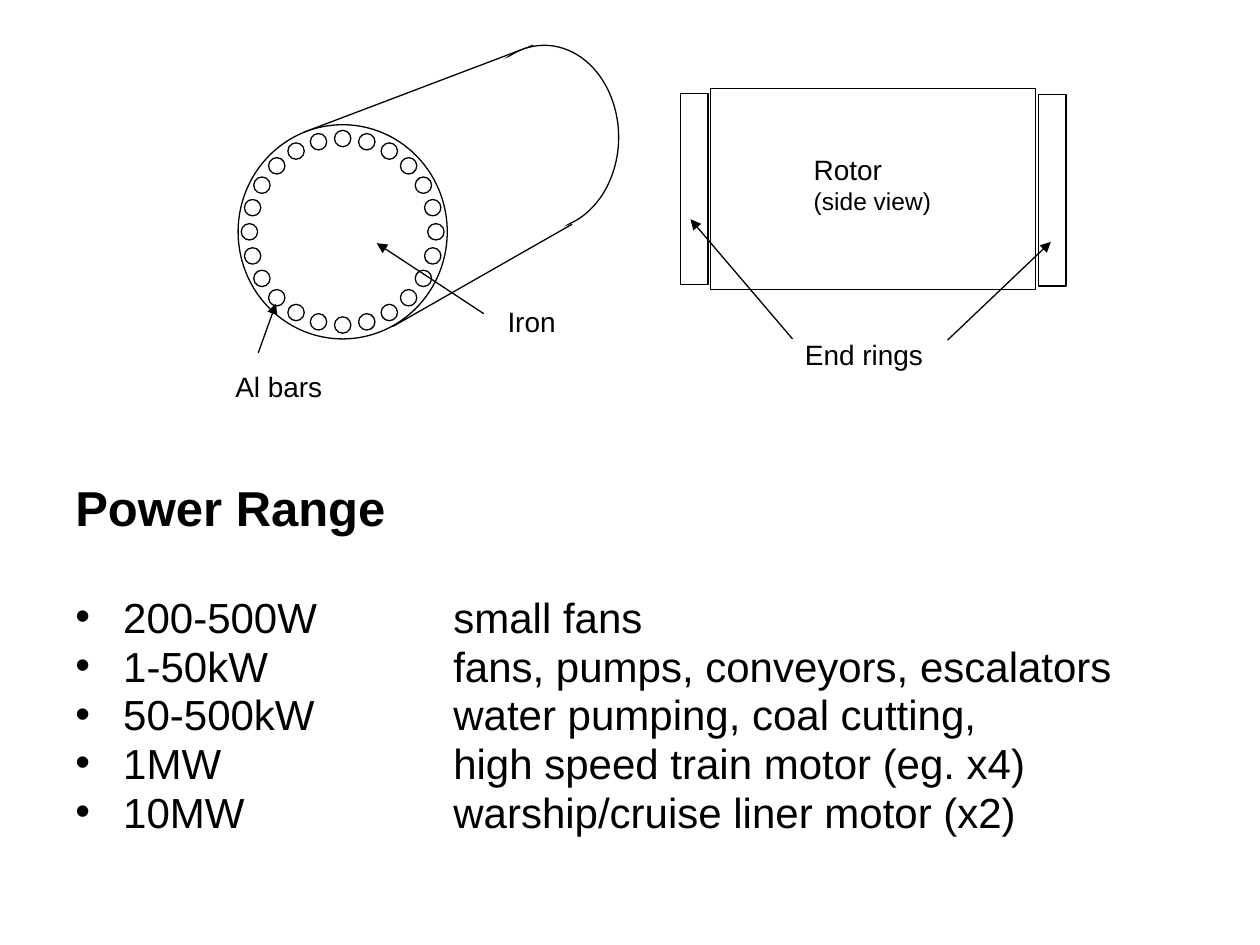
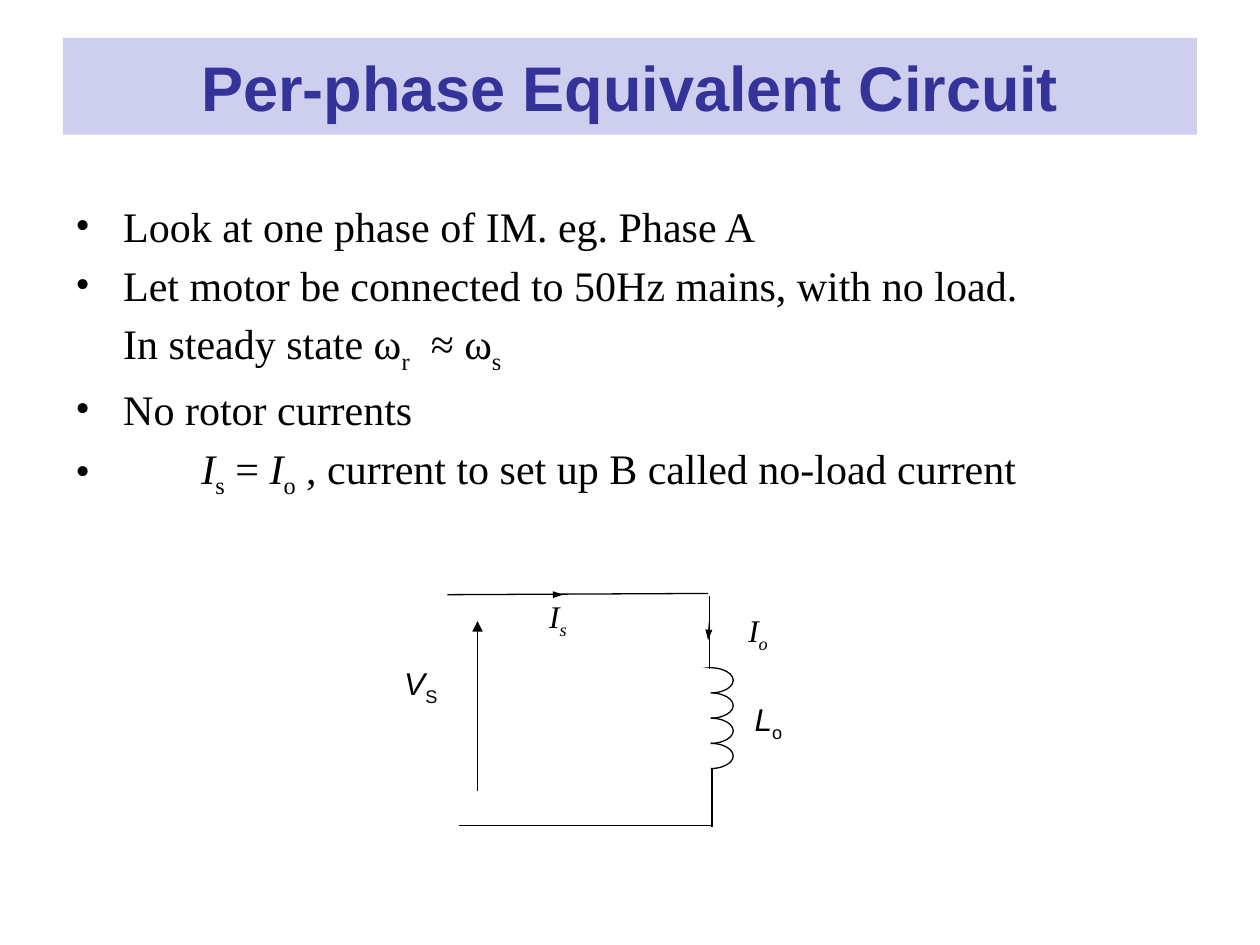
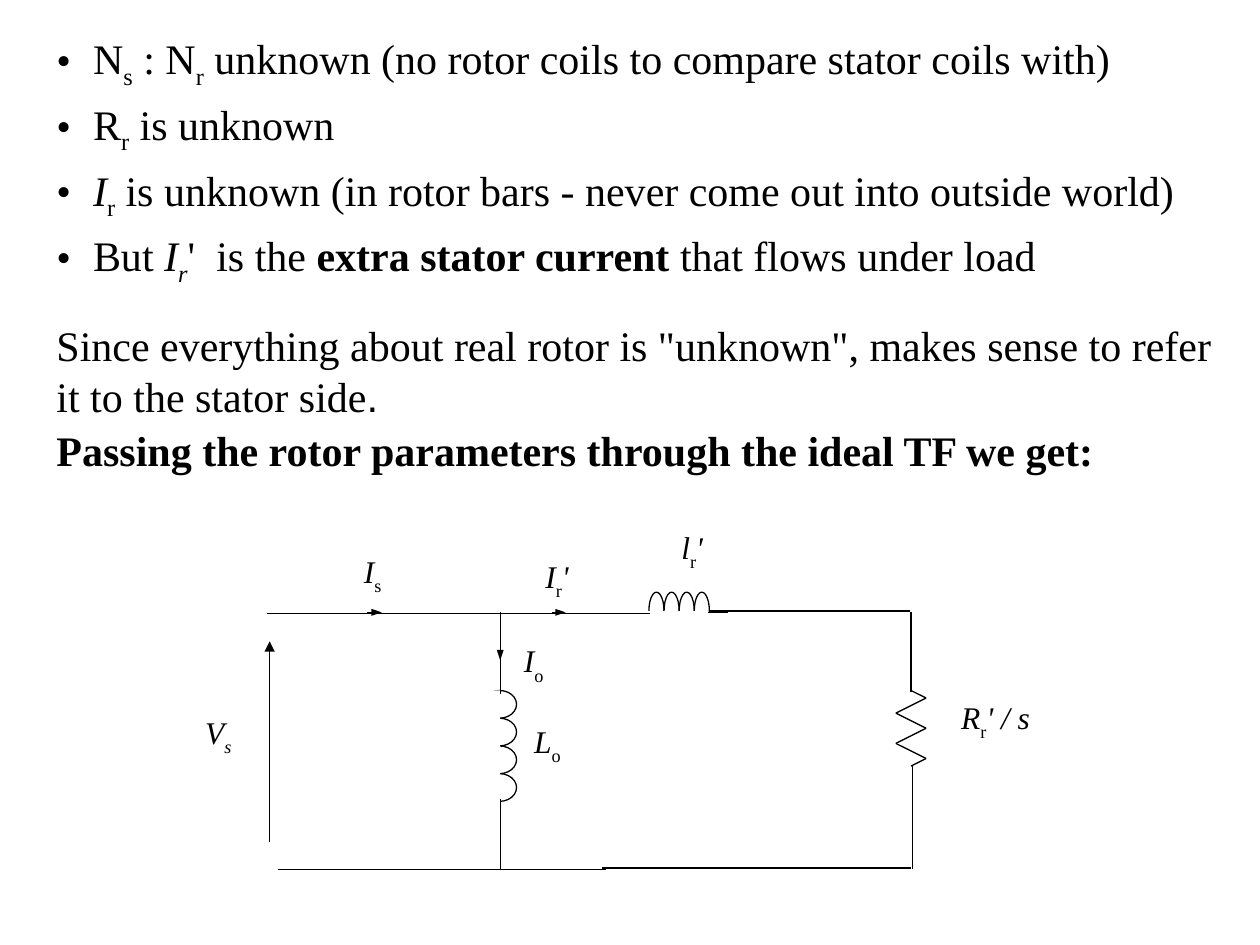
import math

from lxml import etree
from pptx import Presentation
from pptx import util as u
from pptx.dml.color import RGBColor
from pptx.enum import shapes, text
from pptx.oxml import ns

BLACK = "000000"
WHITE = "FFFFFF"
TITLE_BAND = "CECEEF"
TITLE_TEXT = "333399"
SANS = "Arial"
SERIF = "Times New Roman"
LINE_WIDTH = u.Pt(0.75)
ELLIPSE = shapes.MSO_SHAPE.OVAL
RECTANGLE = shapes.MSO_SHAPE.RECTANGLE
BODY_SIZE = 24
BODY_GAP = 4.8
STYLE_ATTRIBUTES = {
    "i": ("i", "1"),
    "b": ("b", "1"),
    "_": ("baseline", "-25000"),
    "v": ("baseline", "-30000"),
    "w": ("spc", "600"),
}


def rgb(color):
    return RGBColor.from_string(color)


def add_child(parent, tag, **attributes):
    return etree.SubElement(parent, ns.qn(tag), **attributes)


def add_runs(paragraph, runs):
    for content, style in runs:
        run = paragraph.add_run()
        run.text = content
        for mark in style:
            run.font._element.set(*STYLE_ATTRIBUTES[mark])


def set_font(paragraph, font, size, color=BLACK, bold=None):
    paragraph.font.name = font
    paragraph.font.size = u.Pt(size)
    paragraph.font.color.rgb = rgb(color)
    paragraph.font.bold = bold


def add_paragraph(frame, runs, font, size=BODY_SIZE, bold=None, bullet=False,
                  left=0.0, hanging=0.0, before=BODY_GAP, spacing=None, tab=None):
    first = not frame.paragraphs[0].runs
    paragraph = frame.paragraphs[0] if first else frame.add_paragraph()
    add_runs(paragraph, [(runs, "")] if isinstance(runs, str) else runs)
    properties = paragraph._p.get_or_add_pPr()
    properties.set("marL", str(u.Inches(left)))
    properties.set("indent", str(-u.Inches(hanging)))
    if bullet:
        add_child(properties, "a:buFont", typeface=font)
        add_child(properties, "a:buChar", char="•")
    if tab:
        stops = add_child(properties, "a:tabLst")
        add_child(stops, "a:tab", pos=str(u.Inches(tab)), algn="l")
    if spacing:
        paragraph.line_spacing = spacing
    if not first:
        paragraph.space_before = u.Pt(before)
    set_font(paragraph, font, size, bold=bold)
    return paragraph


def add_text_frame(slide, left, top, width, height, fill=None):
    box = slide.shapes.add_textbox(*map(u.Inches, (left, top, width, height)))
    box.text_frame.word_wrap = True
    if fill:
        box.fill.solid()
        box.fill.fore_color.rgb = rgb(fill)
    return box.text_frame


def add_shape(slide, kind, left, top, width, height, fill=WHITE, outlined=True):
    shape = slide.shapes.add_shape(kind, *map(u.Inches, (left, top, width, height)))
    shape.shadow.inherit = False
    shape.fill.solid()
    shape.fill.fore_color.rgb = rgb(fill)
    if outlined:
        shape.line.color.rgb = rgb(BLACK)
        shape.line.width = LINE_WIDTH
    else:
        shape.line.fill.background()
    return shape


def add_label(slide, left, top, width, height, lines, font, size):
    shape = add_shape(slide, RECTANGLE, left, top, width, height, outlined=False)
    frame = shape.text_frame
    frame.word_wrap = True
    frame.vertical_anchor = text.MSO_ANCHOR.TOP
    for index, runs in enumerate(lines):
        paragraph = frame.add_paragraph() if index else frame.paragraphs[0]
        add_runs(paragraph, runs)
        paragraph.alignment = text.PP_ALIGN.LEFT
        set_font(paragraph, font, size - 2 * index)


def add_line(slide, start, end, arrow_width=None):
    line = slide.shapes.add_connector(
        shapes.MSO_CONNECTOR.STRAIGHT, *map(u.Inches, (*start, *end)))
    line.line.color.rgb = rgb(BLACK)
    line.line.width = LINE_WIDTH
    if arrow_width:
        add_child(line.line._get_or_add_ln(), "a:tailEnd", type="triangle", w=arrow_width)
    add_child(line._element.spPr, "a:effectLst")


def add_lines(slide, segments, arrow_width=None):
    for start, end in segments:
        add_line(slide, start, end, arrow_width)


def add_coil(slide, left, top, width, height, step_x, step_y, cover):
    for turn in range(4):
        add_shape(slide, ELLIPSE, left + turn * step_x, top + turn * step_y, width, height)
    add_shape(slide, RECTANGLE, *cover, outlined=False)


def add_resistor(slide, center, top, swing, step):
    sides = [0, 1, -1, 1, -1, 1, 0]
    heights = [0, 0.5, 1.5, 2.5, 3.5, 4.5, 5]
    points = [(center + side * swing, top + height * step)
              for side, height in zip(sides, heights)]
    add_lines(slide, zip(points, points[1:]))


def add_title(slide, title):
    band = add_shape(slide, RECTANGLE, 0.5, 0.3, 9, 0.77, TITLE_BAND, outlined=False)
    band.text_frame.vertical_anchor = text.MSO_ANCHOR.MIDDLE
    paragraph = band.text_frame.paragraphs[0]
    paragraph.text = title
    paragraph.alignment = text.PP_ALIGN.CENTER
    set_font(paragraph, SANS, 36, TITLE_TEXT, bold=True)


def add_rotor_cylinder(slide):
    add_shape(slide, ELLIPSE, 1.89, 0.99, 1.66, 1.7)
    bar_count, bar_size = 24, 0.13
    for bar in range(bar_count):
        angle = 2 * math.pi * bar / bar_count
        add_shape(slide, ELLIPSE,
                  2.72 + 0.74 * math.sin(angle) - bar_size / 2,
                  1.84 - 0.74 * math.cos(angle) - bar_size / 2, bar_size, bar_size)
    add_lines(slide, [((2.41, 1.05), (4.23, 0.36)), ((3.12, 2.59), (4.54, 1.78))])
    add_shape(slide, ELLIPSE, 3.73, 0.36, 1.18, 1.46)
    add_shape(slide, ELLIPSE, 3.64, 0.42, 1.13, 1.47, outlined=False)
    add_label(slide, 3.93, 2.37, 0.84, 0.55, [[("Iron", "")]], SANS, 16)
    add_label(slide, 1.77, 2.88, 1.24, 0.55, [[("Al bars", "")]], SANS, 16)
    add_lines(slide, [((2.05, 2.8), (2.19, 2.41)), ((3.84, 2.49), (2.99, 1.93))], "med")


def add_rotor_side_view(slide):
    add_shape(slide, RECTANGLE, 5.64, 0.7, 2.58, 1.6)
    add_shape(slide, RECTANGLE, 5.4, 0.74, 0.22, 1.52)
    add_shape(slide, RECTANGLE, 8.24, 0.75, 0.22, 1.52)
    add_label(slide, 6.29, 2.63, 1.48, 0.55, [[("End rings", "")]], SANS, 16)
    add_lines(slide, [((6.29, 2.69), (5.48, 1.74)), ((7.52, 2.7), (8.34, 1.92))], "med")
    add_label(slide, 6.36, 1.16, 1.48, 0.75,
              [[("Rotor", "")], [("(side view)", "")]], SANS, 16)


def build_power_range(slide):
    frame = add_text_frame(slide, 0.5, 3.83, 9, 3.31)
    add_paragraph(frame, "Power Range", SANS, 28, bold=True, spacing=0.8)
    ranges = [
        ("200-500W", "small fans"),
        ("1-50kW", "fans, pumps, conveyors, escalators"),
        ("50-500kW", "water pumping, coal cutting,"),
        ("1MW", "high speed train motor (eg. x4)"),
        ("10MW", "warship/cruise liner motor (x2)"),
    ]
    for index, (power, use) in enumerate(ranges):
        add_paragraph(frame, f"{power}\t{use}", SANS, bullet=True, left=0.38, hanging=0.38,
                      before=BODY_GAP if index else 37.3, spacing=0.8, tab=3)
    add_rotor_cylinder(slide)
    add_rotor_side_view(slide)


def build_no_load_circuit(slide):
    add_title(slide, "Per-phase Equivalent Circuit")
    frame = add_text_frame(slide, 0.5, 1.54, 9.5, 3.15)
    items = [
        ("Look at one phase of IM. eg. Phase A", True),
        ("Let motor be connected to 50Hz mains, with no load.", True),
        ([("In steady state ω", ""), ("r", "_"), (" ", "w"), ("≈ ω", ""), ("s", "_")], False),
        ("No rotor currents", True),
        ([("\tI", "i"), ("s", "_"), (" = ", ""), ("I", "i"), ("o", "_"),
          (" , current to set up B called no-load current", "")], True),
    ]
    for runs, bullet in items:
        add_paragraph(frame, runs, SERIF, bullet=bullet, left=0.38,
                      hanging=0.38 if bullet else 0, tab=1)

    add_label(slide, 3.11, 5.22, 0.59, 0.53, [[("V", "i"), ("S", "_")]], SANS, 18)
    add_label(slide, 4.26, 4.69, 0.59, 0.5, [[("I", "i"), ("s", "i_")]], SERIF, 18)
    add_coil(slide, 5.46, 5.3, 0.36, 0.2, 0, 0.2, cover=(5.37, 5.3, 0.27, 0.87))
    add_lines(slide, [
        ((3.64, 6.55), (5.65, 6.55)),
        ((3.55, 4.72), (5.62, 4.71)),
        ((5.65, 6.1), (5.65, 6.56)),
        ((5.63, 5.31), (5.63, 4.73)),
    ])
    add_line(slide, (3.79, 6.28), (3.79, 4.93), "med")
    add_lines(slide, [((4.27, 4.72), (4.47, 4.72)), ((5.63, 4.94), (5.62, 5.08))], "sm")
    add_label(slide, 5.89, 5.51, 0.68, 0.46, [[("L", "i"), ("o", "_")]], SANS, 18)
    add_label(slide, 5.84, 4.8, 0.59, 0.5, [[("I", "i"), ("o", "i_")]], SERIF, 18)


def build_referred_circuit(slide):
    frame = add_text_frame(slide, 0.35, 0.21, 9.5, 3.15, WHITE)
    items = [
        [("N", ""), ("s", "_"), (" : N", ""), ("r", "_"),
         (" unknown (no rotor coils to compare stator coils with)", "")],
        [("R", ""), ("r", "_"), (" is unknown", "")],
        [("I", "i"), ("r", "_"),
         (" is unknown (in rotor bars - never come out into outside world)", "")],
        [("But ", ""), ("I", "i"), ("r", "i_"), ("'", ""), (" ", "w"), ("is the ", ""),
         ("extra stator current", "b"), (" that flows under load", "")],
    ]
    for runs in items:
        add_paragraph(frame, runs, SERIF, bullet=True, left=0.29, hanging=0.29)
    reason = add_paragraph(frame, [
        ("Since everything about real rotor is \"unknown\", "
         "makes sense to refer it to the stator side", ""), (".", "")], SERIF, before=18.7)
    reason.runs[-1].font.name = SANS
    conclusion = add_text_frame(slide, 0.35, 3.32, 8.47, 0.9)
    add_paragraph(conclusion, "Passing the rotor parameters through the ideal TF we get:",
                  SERIF, bold=True)

    labels = [
        (1.53, 5.61, 0.49, [("V", "i"), ("s", "iv")]),
        (4.06, 5.04, 0.57, [("I", "i"), ("o", "v")]),
        (4.14, 5.68, 0.61, [("L", "i"), ("o", "v")]),
        (5.31, 4.14, 0.47, [("l", "i"), ("r", "v"), ("'", "i")]),
        (7.53, 5.49, 0.78, [("R", "i"), ("r", "v"), ("' / s", "i")]),
        (4.23, 4.37, 0.56, [("I", "i"), ("r", "v"), ("'", "i")]),
        (2.79, 4.33, 0.56, [("I", "i"), ("s", "v")]),
    ]
    for left, top, width, runs in labels:
        add_label(slide, left, top, width, 0.46, [runs], SERIF, 18)
    add_coil(slide, 3.83, 5.48, 0.27, 0.22, 0, 0.22, cover=(3.77, 5.48, 0.2, 0.95))
    add_coil(slide, 5.15, 4.7, 0.12, 0.3, 0.12, 0, cover=(5.11, 4.85, 0.51, 0.23))
    add_shape(slide, RECTANGLE, 5.58, 4.86, 0.14, 0.19, outlined=False)
    add_resistor(slide, 7.23, 5.48, 0.12, 0.12)
    add_lines(slide, [
        ((2.21, 6.9), (4.81, 6.9)),
        ((4.78, 6.89), (7.23, 6.89)),
        ((3.97, 5.51), (3.97, 4.86)),
        ((3.97, 6.34), (3.97, 6.9)),
        ((2.12, 4.87), (4.81, 4.87)),
        ((4.78, 4.87), (5.16, 4.87)),
        ((5.62, 4.86), (5.78, 4.86)),
        ((5.63, 4.85), (6.26, 4.85)),
        ((7.22, 4.85), (6.25, 4.85)),
        ((7.23, 5.49), (7.23, 4.86)),
        ((7.24, 6.9), (7.24, 6.08)),
    ])
    add_line(slide, (2.14, 6.68), (2.14, 5.09), "med")
    add_lines(slide, [
        ((3.97, 5.13), (3.97, 5.24)),
        ((2.91, 4.86), (3.03, 4.86)),
        ((4.38, 4.86), (4.49, 4.86)),
    ], "sm")


def main():
    presentation = Presentation()
    presentation.slide_width = u.Inches(10)
    presentation.slide_height = u.Inches(7.5)
    for build in (build_power_range, build_no_load_circuit, build_referred_circuit):
        build(presentation.slides.add_slide(presentation.slide_layouts[6]))
    presentation.save("out.pptx")


if __name__ == "__main__":
    main()
